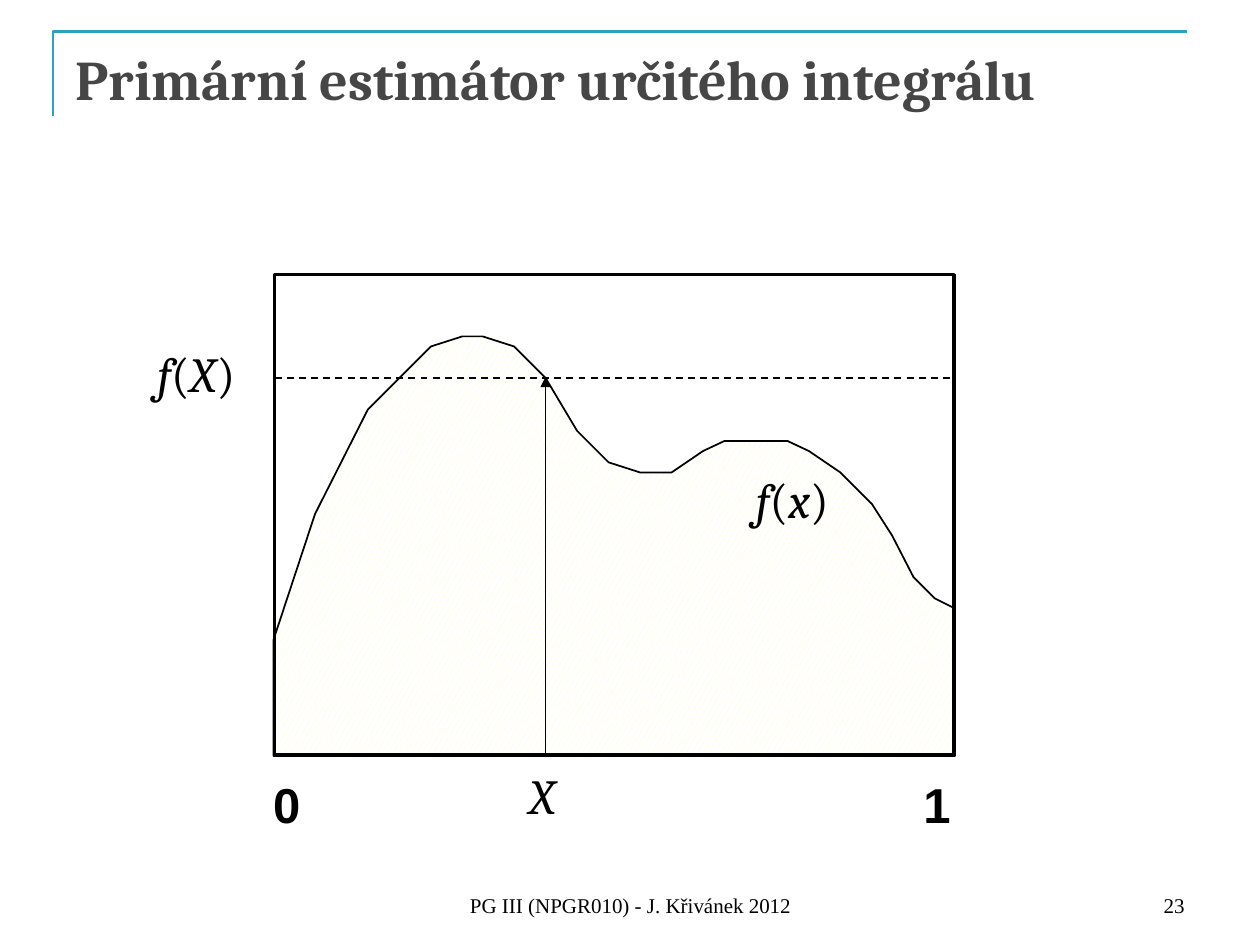
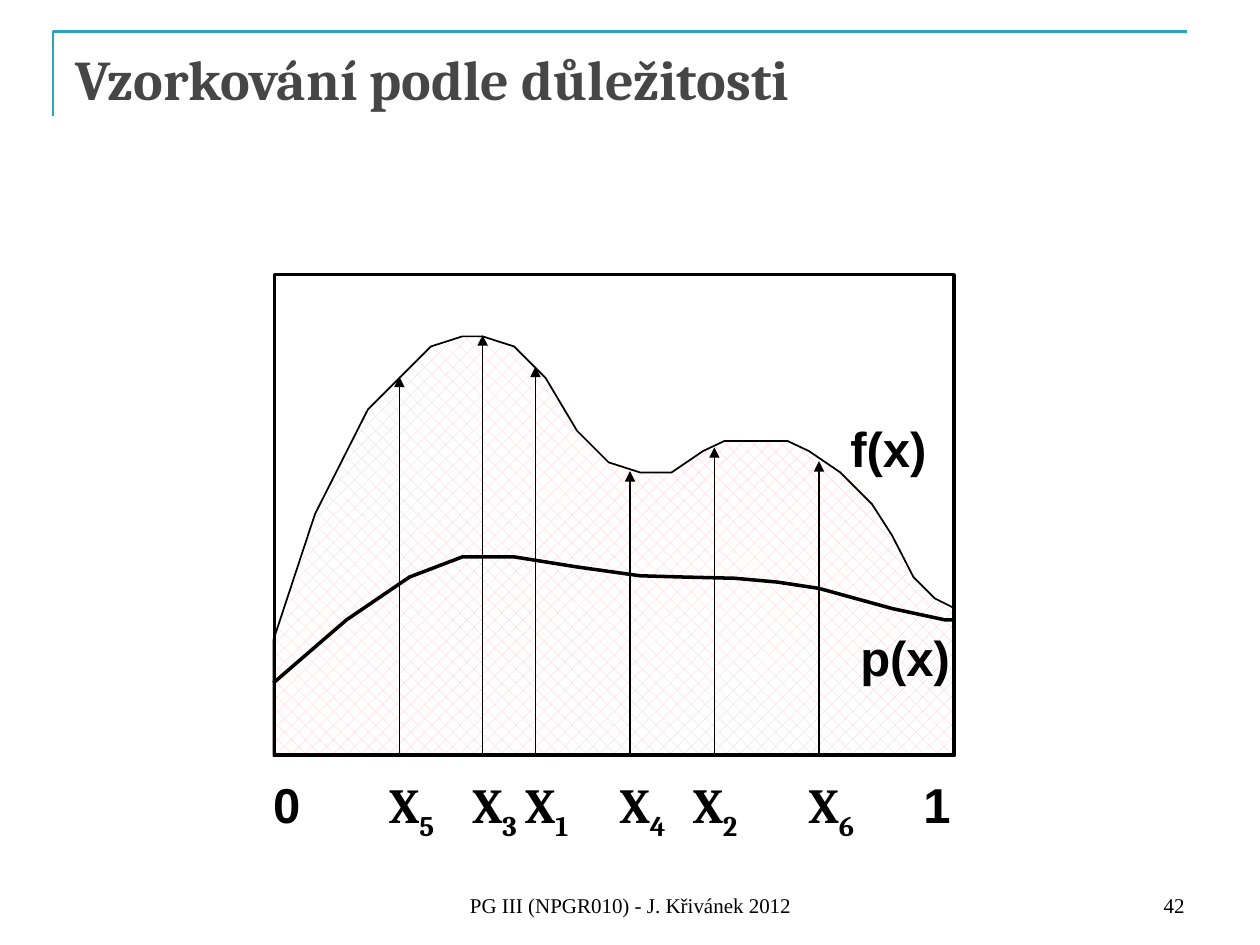
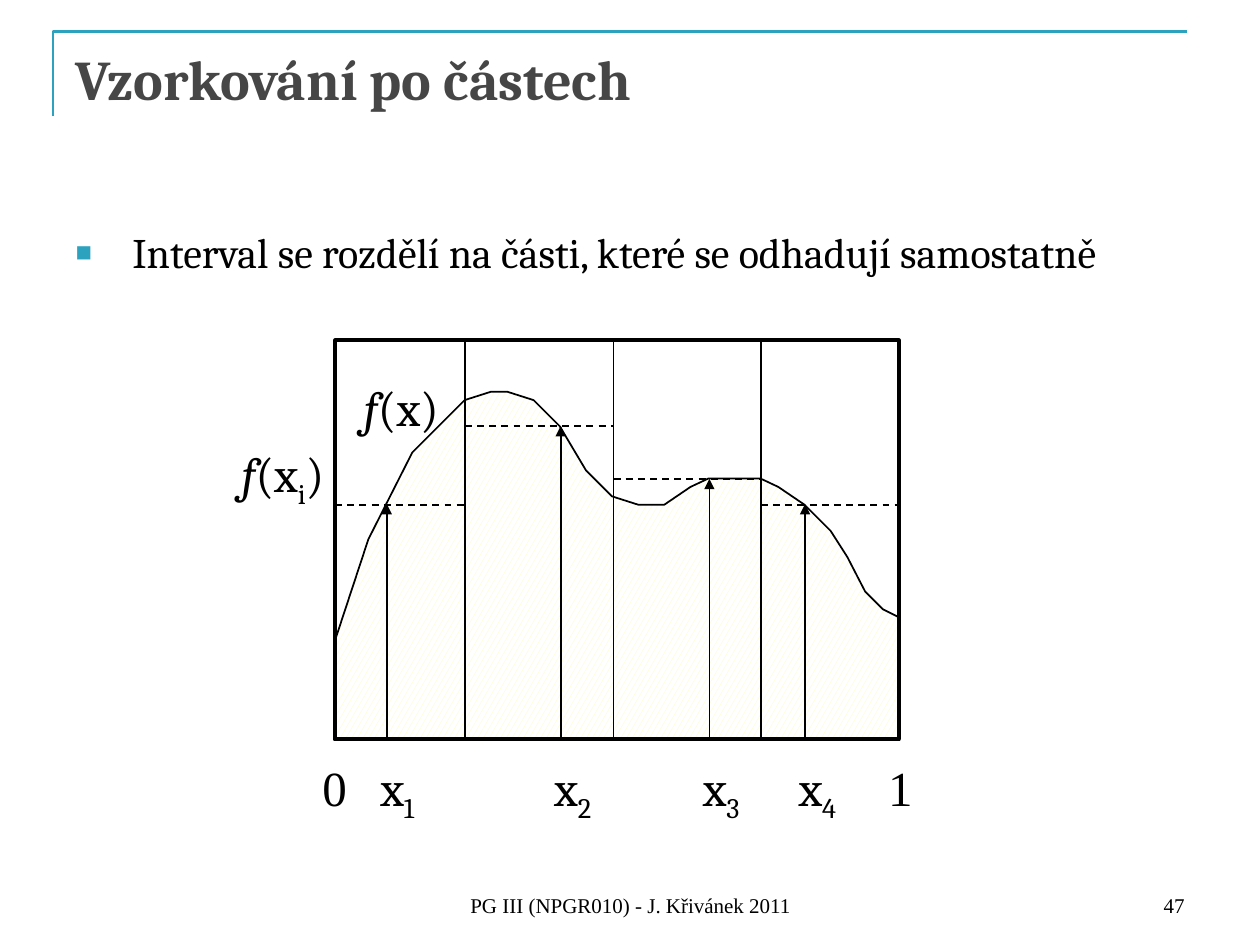
import lxml.etree
import pptx
import pptx.dml.color
import pptx.enum.dml
import pptx.enum.shapes
import pptx.enum.text
import pptx.oxml.ns
import pptx.util

inches = pptx.util.Inches
color = pptx.dml.color.RGBColor.from_string
qn = pptx.oxml.ns.qn
Align = pptx.enum.text.PP_ALIGN
Anchor = pptx.enum.text.MSO_ANCHOR
Pattern = pptx.enum.dml.MSO_PATTERN

ACCENT, TITLE_GRAY, BLACK, WHITE = "2DA2BF", "464646", "000000", "FFFFFF"
YELLOW, PINK = "FCFEB9", "FFC5CF"
SERIF, SANS, FOOTER_FONT = "Cambria", "Arial", "Times New Roman"

CURVE = [
    (2.17, 5.08), (2.5, 4.08), (2.92, 3.25), (3.42, 2.75), (3.67, 2.67), (3.83, 2.67),
    (4.08, 2.75), (4.33, 3), (4.58, 3.42), (4.83, 3.67), (5.08, 3.75), (5.33, 3.75),
    (5.58, 3.58), (5.75, 3.5), (6.25, 3.5), (6.42, 3.58), (6.67, 3.75), (6.92, 4),
    (7.08, 4.25), (7.25, 4.58), (7.42, 4.75), (7.58, 4.83), (7.58, 6), (2.17, 6),
]
DENSITY = [
    (2.17, 5.42), (2.75, 4.92), (3.25, 4.58), (3.67, 4.42), (4.08, 4.42), (4.58, 4.5),
    (5.08, 4.57), (5.42, 4.58), (5.83, 4.59), (6.17, 4.62), (6.5, 4.67), (7.08, 4.83),
    (7.5, 4.92), (7.58, 4.92),
]
FRAME = (2.18, 2.18, 5.39, 3.81)
SMALL = 0.83  # size of the stratified plot relative to the other two
SMALL_CURVE = [(2.65 + (x - 2.17) * SMALL, 3.11 + (y - 2.67) * SMALL) for x, y in CURVE]
SMALL_FRAME = (2.66, 2.7, FRAME[2] * SMALL, FRAME[3] * SMALL)
BASE, SMALL_BASE = 6.01, 5.88

# Labels: left, top, width, font, bold, runs of (text, style)
end_labels = [(x, 6.1, 0.42, SANS, True, [(text, "")]) for x, text in ((2.07, "0"), (7.23, "1"))]

primary_labels = end_labels + [
    (4.1, 6.03, 0.48, SERIF, False, [("X", "italic")]),
    (5.9, 3.68, 0.82, SERIF, False, [("f", "italic"), ("(", ""), ("x", "italic"), (")", "")]),
    (1.15, 2.68, 0.91, SERIF, False, [("f", "italic"), ("(", ""), ("X", "italic"), (")", "")]),
]

importance_samples = {"1": (4.25, 2.91), "2": (5.67, 3.55), "3": (3.83, 2.66),
                      "4": (5, 3.74), "5": (3.17, 2.99), "6": (6.5, 3.66)}
importance_labels = end_labels + [
    (6.65, 3.27, 0.9, SANS, True, [("f(x)", "")]),
    (6.73, 4.93, 0.95, SANS, True, [("p(x)", "")]),
]
for index, (x, top) in importance_samples.items():
    left = 5.4 if index == "2" else x - 0.18
    importance_labels.append((left, 6.1, 0.68, SERIF, True, [("X", ""), (index, "sub")]))

strata_samples = {"1": (3.07, 4), "2": (4.45, 3.38), "3": (5.63, 3.8), "4": (6.39, 4)}
strata_edges = [2.66, 3.69, 4.87, 6.04, 7.14]
strata_heights = [4.01, 3.38, 3.8, 4.01]
strata_lines = [(x, 2.7, x, 5.87, "solid") for x in strata_edges[1:-1]]
strata_lines += [(left, y, right, y, "dash")
                 for left, right, y in zip(strata_edges, strata_edges[1:], strata_heights)]
strata_labels = [
    (2.79, 2.95, 0.82, SERIF, False, [("f", "italic"), ("(x)", "")]),
    (1.82, 3.47, 0.9, SERIF, False, [("f", "italic"), ("(x", ""), ("i", "sub"), (")", "")]),
    (2.46, 5.96, 0.4, FOOTER_FONT, False, [("0", "")]),
    (6.95, 5.96, 0.4, FOOTER_FONT, False, [("1", "")]),
]
for index, (x, top) in strata_samples.items():
    strata_labels.append((x - 0.15, 5.96, 0.54, SERIF, False, [("x", ""), (index, "sub")]))

slides = [
    dict(title="Primární estimátor určitého integrálu", number="23", year="2012",
         curve=CURVE, frame=FRAME, pattern=Pattern.LARGE_CONFETTI, tint=YELLOW,
         lines=[(4.33, BASE, 4.33, 2.99, "arrow"), (2.18, 3, 7.58, 3, "dash")],
         labels=primary_labels),
    dict(title="Vzorkování podle důležitosti", number="42", year="2012",
         curve=CURVE, frame=FRAME, pattern=Pattern.PERCENT_25, tint=PINK, density=DENSITY,
         lines=[(x, BASE, x, top, "arrow") for x, top in importance_samples.values()],
         labels=importance_labels),
    dict(title="Vzorkování po částech", number="47", year="2011",
         body="Interval se rozdělí na části, které se odhadují samostatně",
         curve=SMALL_CURVE, frame=SMALL_FRAME, pattern=Pattern.LARGE_CONFETTI, tint=YELLOW,
         lines=strata_lines + [(x, SMALL_BASE, x, top, "arrow")
                               for x, top in strata_samples.values()],
         labels=strata_labels),
]


def add_outline(page, points, line_color, width, closed=False):
    corners = [(inches(x), inches(y)) for x, y in points]
    builder = page.shapes.build_freeform(*corners[0])
    builder.add_line_segments(corners[1:], close=closed)
    outline = builder.convert_to_shape()
    outline.shadow.inherit = False
    outline.fill.background()
    outline.line.color.rgb = color(line_color)
    outline.line.width = pptx.util.Pt(width)
    return outline


def add_text(page, bounds, runs, font, size, bold=False):
    """Add a text box of one paragraph from (text, style) runs."""
    box = page.shapes.add_textbox(*map(inches, bounds))
    box.text_frame.word_wrap = False
    para = box.text_frame.paragraphs[0]
    for text, style in runs:
        span = para.add_run()
        span.text = text
        span.font.name = font
        span.font.size = pptx.util.Pt(size)
        span.font.bold = bold
        span.font.italic = style == "italic"
        span.font.color.rgb = color(BLACK)
        if style == "sub":
            span.font._element.set("baseline", "-25000")
    return box


deck = pptx.Presentation()
deck.slide_width, deck.slide_height = inches(10), inches(7.5)

for content in slides:
    layout = deck.slide_layouts[1 if "body" in content else 5]
    page = deck.slides.add_slide(layout)
    add_outline(page, [(0.42, 0.92), (0.42, 0.25), (9.42, 0.25)], ACCENT, 1.5)

    title = page.shapes.title
    title.left, title.top, title.width, title.height = map(inches, (0.5, 0.3, 9, 1.25))
    title.text_frame.text = content["title"]
    title.text_frame.vertical_anchor = Anchor.TOP
    title.text_frame.auto_size = pptx.enum.text.MSO_AUTO_SIZE.NONE
    para = title.text_frame.paragraphs[0]
    para.alignment = Align.LEFT
    font = para.runs[0].font
    font.name, font.size, font.bold = SERIF, pptx.util.Pt(32), True
    font.color.rgb = color(TITLE_GRAY)

    if "body" in content:
        body = page.placeholders[1]
        body.left, body.top, body.width, body.height = map(inches, (0.5, 1.75, 9, 4.95))
        body.text_frame.text = content["body"]
        para = body.text_frame.paragraphs[0]
        para.space_before = pptx.util.Pt(4.8)
        font = para.runs[0].font
        font.name, font.size = SERIF, pptx.util.Pt(24)
        font.color.rgb = color(BLACK)
        properties = para._p.get_or_add_pPr()
        properties.set("marL", str(inches(0.45)))
        properties.set("indent", str(-inches(0.45)))
        bullet_color = lxml.etree.SubElement(properties, qn("a:buClr"))
        lxml.etree.SubElement(bullet_color, qn("a:srgbClr"), val=ACCENT)
        lxml.etree.SubElement(properties, qn("a:buSzPct"), val="65000")
        lxml.etree.SubElement(properties, qn("a:buChar"), char="■")

    area = add_outline(page, content["curve"], BLACK, 1, closed=True)
    area.fill.patterned()
    area.fill.pattern = content["pattern"]
    area.fill.fore_color.rgb = color(content["tint"])
    area.fill.back_color.rgb = color(WHITE)

    frame = page.shapes.add_shape(pptx.enum.shapes.MSO_SHAPE.RECTANGLE,
                                  *map(inches, content["frame"]))
    frame.shadow.inherit = False
    frame.fill.background()
    frame.line.color.rgb = color(BLACK)
    frame.line.width = pptx.util.Pt(2)

    if "density" in content:
        add_outline(page, content["density"], BLACK, 2)

    for *ends, kind in content["lines"]:
        connector = page.shapes.add_connector(pptx.enum.shapes.MSO_CONNECTOR.STRAIGHT,
                                              *map(inches, ends))
        connector.line.color.rgb = color(BLACK)
        connector.line.width = pptx.util.Pt(1)
        if kind == "dash":
            connector.line.dash_style = pptx.enum.dml.MSO_LINE.DASH
        if kind == "arrow":
            lxml.etree.SubElement(connector.line._get_or_add_ln(), qn("a:tailEnd"),
                                  type="triangle")
        lxml.etree.SubElement(connector._element.spPr, qn("a:effectLst"))

    for left, top, width, font_name, bold, runs in content["labels"]:
        add_text(page, (left, top, width, 0.57), runs, font_name, 28, bold)

    course = f"PG III (NPGR010) - J. Křivánek {content['year']}"
    for left, width, text, alignment in ((3.42, 3.17, course, Align.CENTER),
                                         (7.17, 2.33, content["number"], Align.RIGHT)):
        footer = add_text(page, (left, 6.83, width, 0.5), [(text, "")], FOOTER_FONT, 12)
        footer.text_frame.word_wrap = True
        footer.text_frame.vertical_anchor = Anchor.BOTTOM
        footer.text_frame.paragraphs[0].alignment = alignment

deck.save("out.pptx")
